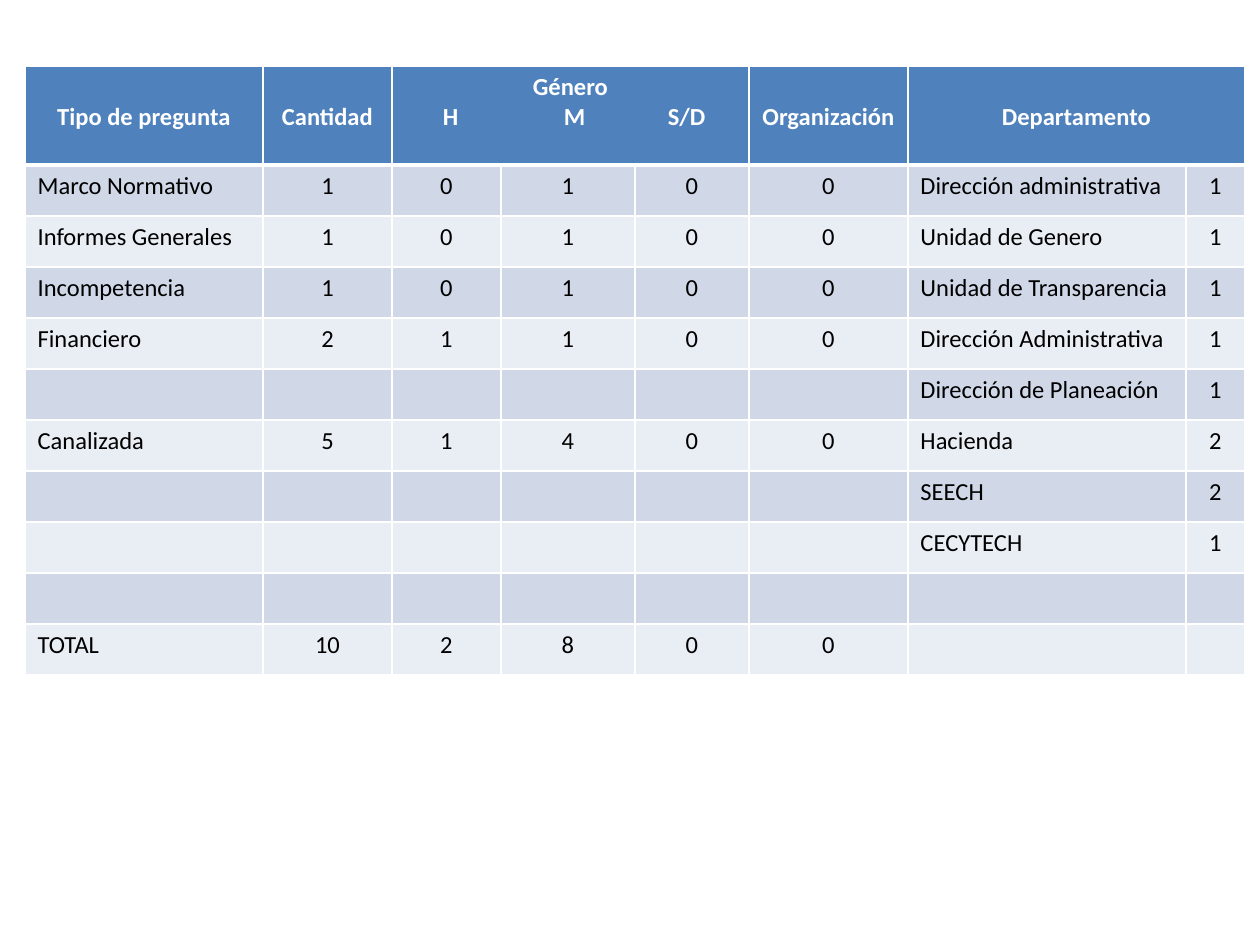
from lxml.etree import SubElement
from pptx import Presentation
from pptx.dml.color import RGBColor
from pptx.enum.text import PP_ALIGN
from pptx.oxml.ns import qn
from pptx.util import Emu, Pt

WHITE = RGBColor(0xFF, 0xFF, 0xFF)
BLACK = RGBColor(0x00, 0x00, 0x00)
HEADER_BLUE = RGBColor(0x4F, 0x81, 0xBD)
BANDS = [RGBColor(0xD0, 0xD8, 0xE8), RGBColor(0xE9, 0xED, 0xF4)]

COL_WIDTHS = [238, 129, 109, 134, 114, 159, 278, 59]
HEADER_HEIGHT, ROW_HEIGHT = 99, 51
LEFT_COLS = (0, 6)
TITLE_TOP = 36  # puts one-line titles level with the second line of "Género"
GENDER_TABS = [46, 170, 282]

HEADERS = {0: "Tipo de pregunta", 1: "Cantidad", 2: "Género",
           5: "Organización", 6: "Departamento"}
ROWS = [
    ["Marco Normativo", "1", "0", "1", "0", "0", "Dirección administrativa", "1"],
    ["Informes Generales", "1", "0", "1", "0", "0", "Unidad de Genero", "1"],
    ["Incompetencia", "1", "0", "1", "0", "0", "Unidad de Transparencia", "1"],
    ["Financiero", "2", "1", "1", "0", "0", "Dirección Administrativa", "1"],
    [""] * 6 + ["Dirección de Planeación", "1"],
    ["Canalizada", "5", "1", "4", "0", "0", "Hacienda", "2"],
    [""] * 6 + ["SEECH", "2"],
    [""] * 6 + ["CECYTECH", "1"],
    [""] * 8,
    ["TOTAL", "10", "2", "8", "0", "0", "", ""],
]


def px(n):
    return Emu(round(n * 914400 / 126))


def add_text(p, text, color, bold, align):
    p.alignment = align
    r = p.add_run()
    r.text = text
    r.font.name = "Calibri"
    r.font.size = Pt(14)
    r.font.bold = bold
    r.font.color.rgb = color


prs = Presentation()
prs.slide_width, prs.slide_height = px(1260), px(945)
s = prs.slides.add_slide(prs.slide_layouts[6])

table = s.shapes.add_table(
    len(ROWS) + 1, len(COL_WIDTHS), px(25), px(66), px(sum(COL_WIDTHS)),
    px(HEADER_HEIGHT + ROW_HEIGHT * len(ROWS))).table
for col, width in zip(table.columns, COL_WIDTHS):
    col.width = px(width)
for i, row in enumerate(table.rows):
    row.height = px(ROW_HEIGHT if i else HEADER_HEIGHT)

# White rules, with a heavier one under the header
for i, row in enumerate(table.rows):
    for cell in row.cells:
        tcPr = cell._tc.get_or_add_tcPr()
        for side in ("L", "R", "T", "B"):
            heavy = (i, side) in ((0, "B"), (1, "T"))
            ln = SubElement(tcPr, qn(f"a:ln{side}"), w=str(Pt(3 if heavy else 1)))
            SubElement(SubElement(ln, qn("a:solidFill")), qn("a:srgbClr"), val=str(WHITE))
        cell.fill.solid()
        cell.fill.fore_color.rgb = BANDS[(i - 1) % 2] if i else HEADER_BLUE

# Header
table.cell(0, 2).merge(table.cell(0, 4))
table.cell(0, 6).merge(table.cell(0, 7))
for c, title in HEADERS.items():
    cell = table.cell(0, c)
    add_text(cell.text_frame.paragraphs[0], title, WHITE, True, PP_ALIGN.CENTER)
    if c != 2:
        cell.margin_top = px(TITLE_TOP)

p = table.cell(0, 2).text_frame.add_paragraph()
add_text(p, "\tH\tM\tS/D", WHITE, True, PP_ALIGN.LEFT)
tabs = SubElement(p._p.get_or_add_pPr(), qn("a:tabLst"))
for pos in GENDER_TABS:
    SubElement(tabs, qn("a:tab"), pos=str(px(pos)), algn="ctr")

# Body
for i, values in enumerate(ROWS, start=1):
    for c, value in enumerate(values):
        align = PP_ALIGN.LEFT if c in LEFT_COLS else PP_ALIGN.CENTER
        add_text(table.cell(i, c).text_frame.paragraphs[0], value, BLACK, False, align)

prs.save("out.pptx")
